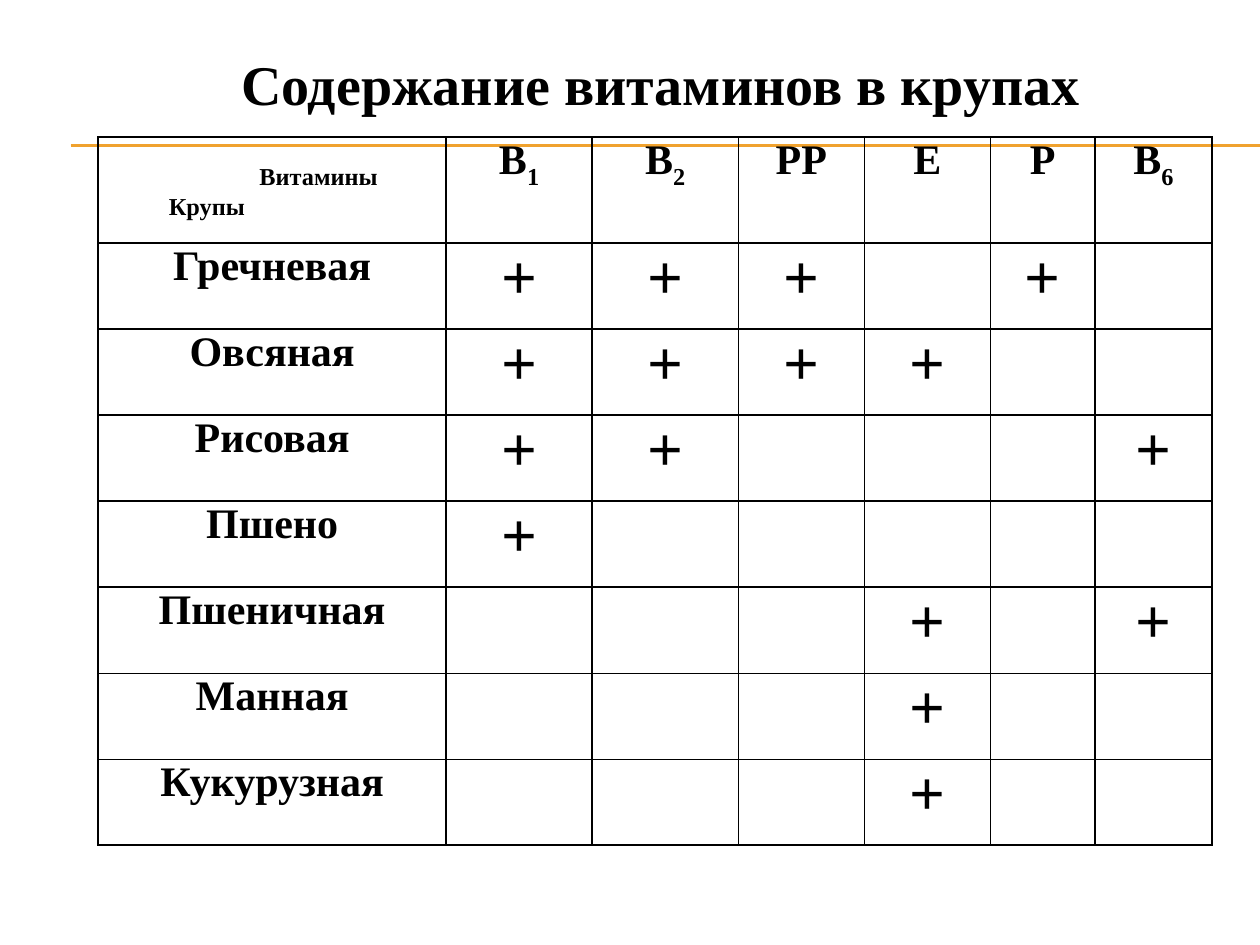
from lxml.etree import SubElement
from pptx import Presentation
from pptx.dml.color import RGBColor
from pptx.enum.shapes import MSO_CONNECTOR as Connector
from pptx.enum.text import MSO_ANCHOR as Anchor, PP_ALIGN as Align
from pptx.oxml.ns import qn
from pptx.util import Inches, Pt

WIDTH, HEIGHT = 10, 7.5
FONT, INK, ACCENT = "Times New Roman", "000000", "F0A22E"
THIN, THICK = 1, 1.5
COLUMNS = [2.76, 1.16, 1.16, 1, 1, 0.83, 0.93]
HEADER_ROW, BODY_ROW = 0.84, 0.683
VITAMINS = [("В", "1"), ("В", "2"), ("РР", ""), ("Е", ""), ("Р", ""), ("В", "6")]
CEREALS = {  # one mark for each vitamin column
    "Гречневая": "+++ + ",
    "Овсяная": "++++  ",
    "Рисовая": "++   +",
    "Пшено": "+     ",
    "Пшеничная": "   + +",
    "Манная": "   +  ",
    "Кукурузная": "   +  ",
}


def color(value):
    return RGBColor.from_string(value)


def write(para, text, size=24, align=Align.CENTER, baseline=0, indent=0, left=0):
    """Add a bold span; baseline is a percentage, indents are in inches."""
    para.alignment = align
    props = para._p.get_or_add_pPr()
    props.set("indent", str(Inches(indent)))
    props.set("marL", str(Inches(left)))
    span = para.add_run()
    span.text = text
    span.font.name, span.font.size, span.font.bold = FONT, Pt(size), True
    span.font.color.rgb = color(INK)
    if baseline:
        span._r.get_or_add_rPr().set("baseline", str(baseline * 1000))


def set_borders(cell, **widths):
    props = cell._tc.get_or_add_tcPr()
    for index, side in enumerate(("L", "R", "T", "B")):
        line = props.makeelement(qn(f"a:ln{side}"), {"w": str(Pt(widths[side]))})
        fill = SubElement(line, qn("a:solidFill"))
        SubElement(fill, qn("a:srgbClr"), val=INK)
        props.insert(index, line)


def add_rules(page, left, top, right):
    """Double accent rule running off to the right edge."""
    for y in (top, top + 0.01):
        rule = page.shapes.add_connector(
            Connector.STRAIGHT, Inches(left), Inches(y), Inches(right), Inches(y))
        rule.line.color.rgb = color(ACCENT)
        rule.line.width = Pt(0.75)
        SubElement(rule._element.spPr, qn("a:effectLst"))


def add_title(page, left, top, width, height):
    box = page.shapes.add_textbox(*map(Inches, (left, top, width, height)))
    frame = box.text_frame
    frame.word_wrap = True
    frame.vertical_anchor = Anchor.TOP
    frame.margin_top = Inches(0.08)
    write(frame.paragraphs[0], "Содержание витаминов в крупах", size=32, indent=0.49)


def fill_header(table):
    # Corner cell names both axes
    frame = table.cell(0, 0).text_frame
    write(frame.paragraphs[0], "Витамины", align=Align.LEFT, baseline=-25, left=1.21)
    write(frame.add_paragraph(), "Крупы", align=Align.LEFT, baseline=30, left=0.49)
    for column, (letter, number) in enumerate(VITAMINS, 1):
        para = table.cell(0, column).text_frame.paragraphs[0]
        write(para, letter)
        if number:
            write(para, number, baseline=-25)


def fill_body(table):
    for row, (cereal, marks) in enumerate(CEREALS.items(), 1):
        write(table.cell(row, 0).text_frame.paragraphs[0], cereal)
        for column, mark in enumerate(marks, 1):
            if mark == "+":
                write(table.cell(row, column).text_frame.paragraphs[0], mark, size=36)


def add_vitamin_table(page, left, top):
    heights = [HEADER_ROW] + [BODY_ROW] * len(CEREALS)
    last_row, last_column = len(heights) - 1, len(COLUMNS) - 1
    table = page.shapes.add_table(
        len(heights), len(COLUMNS), Inches(left), Inches(top),
        Inches(sum(COLUMNS)), Inches(sum(heights))).table
    table.first_row = table.horz_banding = False
    for column, width in zip(table.columns, COLUMNS):
        column.width = Inches(width)

    # Clear cells, with a thick frame and a thick line under the header
    for row, height in enumerate(heights):
        table.rows[row].height = Inches(height)
        for column in range(len(COLUMNS)):
            cell = table.cell(row, column)
            cell.margin_left = cell.margin_right = Inches(0.07)
            cell.margin_top = cell.margin_bottom = 0
            cell.fill.background()
            set_borders(
                cell,
                L=THICK if column == 0 else THIN,
                R=THICK if column == last_column else THIN,
                T=THICK if row <= 1 else THIN,
                B=THICK if row in (0, last_row) else THIN)
    fill_header(table)
    fill_body(table)


def main():
    deck = Presentation()
    deck.slide_width, deck.slide_height = Inches(WIDTH), Inches(HEIGHT)
    page = deck.slides.add_slide(deck.slide_layouts[6])
    add_rules(page, 0.56, 1.15, WIDTH)
    add_vitamin_table(page, 0.78, 1.09)
    add_title(page, 0, 0.31, WIDTH, 1.18)
    deck.save("out.pptx")


if __name__ == "__main__":
    main()
